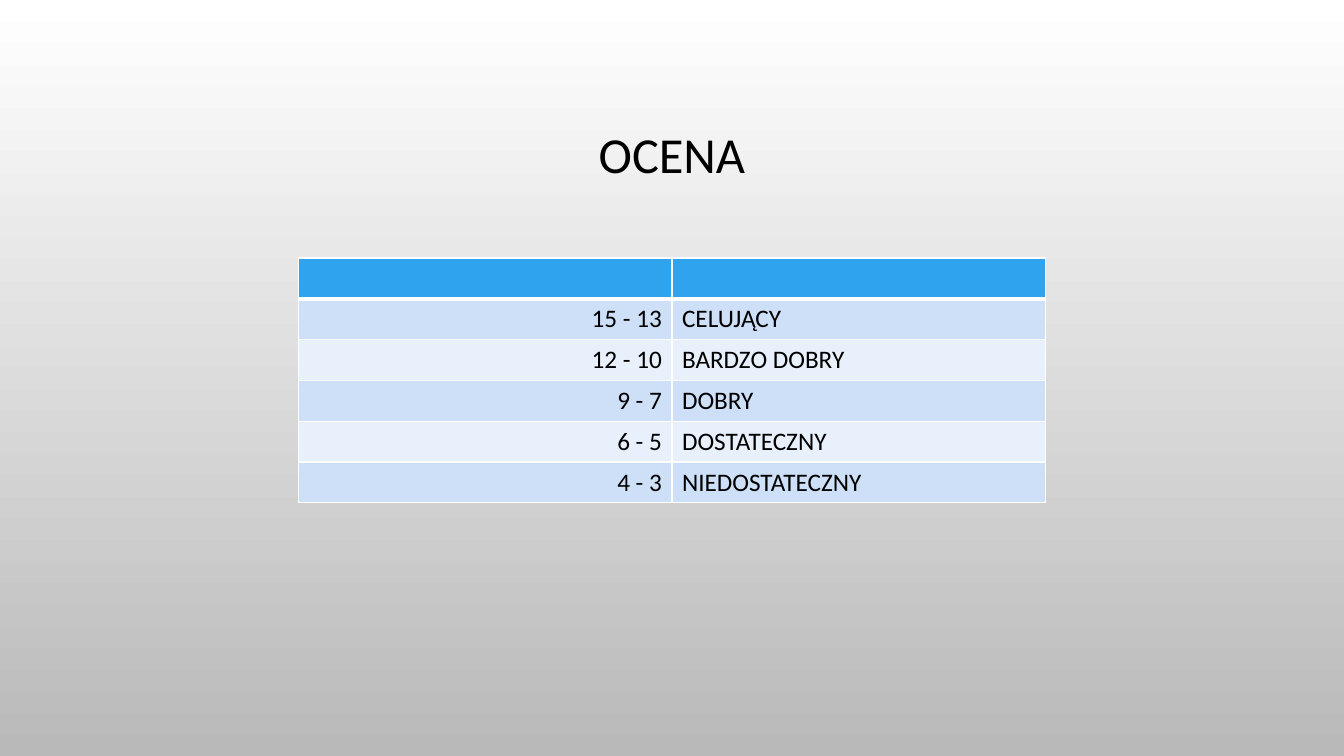
import pptx
import pptx.util
import pptx.dml.color
import pptx.enum.text
import pptx.oxml
import pptx.oxml.ns

Inches = pptx.util.Inches
ALIGN = pptx.enum.text.PP_ALIGN
ANCHOR = pptx.enum.text.MSO_ANCHOR

TITLE = "OCENA"
GRADES = [
    ("", ""),
    ("15 - 13", "CELUJĄCY"),
    ("12 - 10", "BARDZO DOBRY"),
    ("9 - 7", "DOBRY"),
    ("6 - 5", "DOSTATECZNY"),
    ("4 - 3", "NIEDOSTATECZNY"),
]
ALIGNS = [ALIGN.RIGHT, ALIGN.LEFT]
HEAD = "2FA3EE"
BANDS = ["CDE0F8", "E8F0FC"]
BACK = ["FFFFFF", "B9B9B9"]
LEFT, TOP, WIDTH, HEIGHT = 2.96, 2.56, 7.41, 2.43


def color(code):
    return pptx.dml.color.RGBColor.from_string(code)


def write(par, text, size, align, space=1.0):
    for key, val in {"alignment": align, "line_spacing": space}.items():
        setattr(par, key, val)
    run = par.add_run()
    run.text = text
    for key, val in {"name": "Calibri", "size": pptx.util.Pt(size)}.items():
        setattr(run.font, key, val)
    run.font.color.rgb = color("000000")


def border(cell, widths):
    """Draw white cell edges; widths maps side letters to points."""
    props = cell._tc.get_or_add_tcPr()
    for side, width in widths.items():
        props.append(pptx.oxml.parse_xml(
            f'<a:ln{side} {pptx.oxml.ns.nsdecls("a")} w="{pptx.util.Pt(width)}">'
            '<a:solidFill><a:srgbClr val="FFFFFF"/></a:solidFill>'
            f'</a:ln{side}>'))


def main():
    deck = pptx.Presentation()
    deck.slide_width, deck.slide_height = Inches(13.33), Inches(7.5)
    slide = deck.slides.add_slide(deck.slide_layouts[6])

    fill = slide.background.fill
    fill.gradient()
    fill.gradient_angle = 270
    for stop, code in zip(fill.gradient_stops, BACK):
        stop.color.rgb = color(code)

    box = slide.shapes.add_textbox(
        Inches(1), Inches(0.68), Inches(11.33), Inches(1.75))
    frame = box.text_frame
    for key, val in {"word_wrap": True, "vertical_anchor": ANCHOR.MIDDLE}.items():
        setattr(frame, key, val)
    write(frame.paragraphs[0], TITLE, 36, ALIGN.CENTER, 0.9)

    table = slide.shapes.add_table(
        len(GRADES), len(ALIGNS), Inches(LEFT), Inches(TOP),
        Inches(WIDTH), Inches(HEIGHT)).table
    for row in table.rows:
        row.height = Inches(HEIGHT / len(GRADES))
    for r, grade in enumerate(GRADES):
        for c, text in enumerate(grade):
            cell = table.cell(r, c)
            border(cell, {"L": 1, "R": 1, "T": 3 if r == 1 else 1,
                          "B": 3 if r == 0 else 1})
            cell.fill.solid()
            cell.fill.fore_color.rgb = color(BANDS[(r - 1) % 2] if r else HEAD)
            if text:
                write(cell.text_frame.paragraphs[0], text, 18, ALIGNS[c])

    deck.save("out.pptx")


if __name__ == "__main__":
    main()
